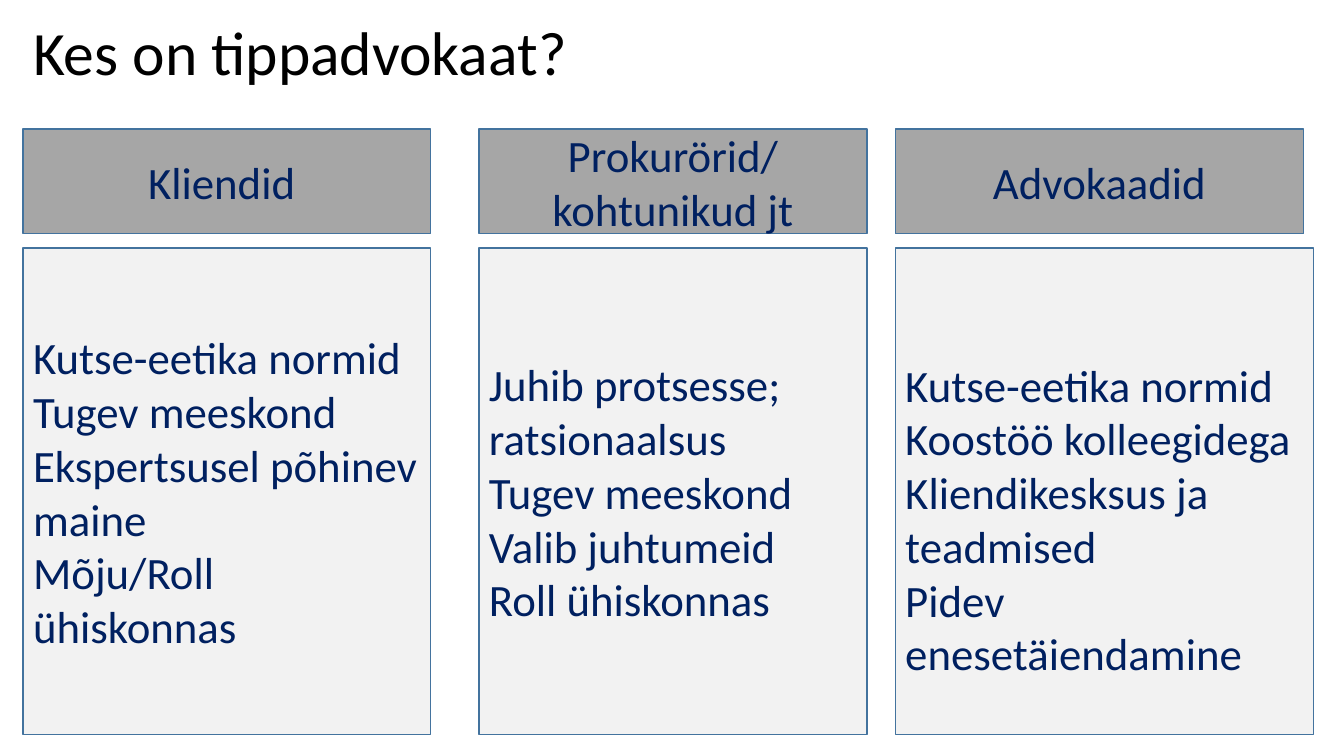
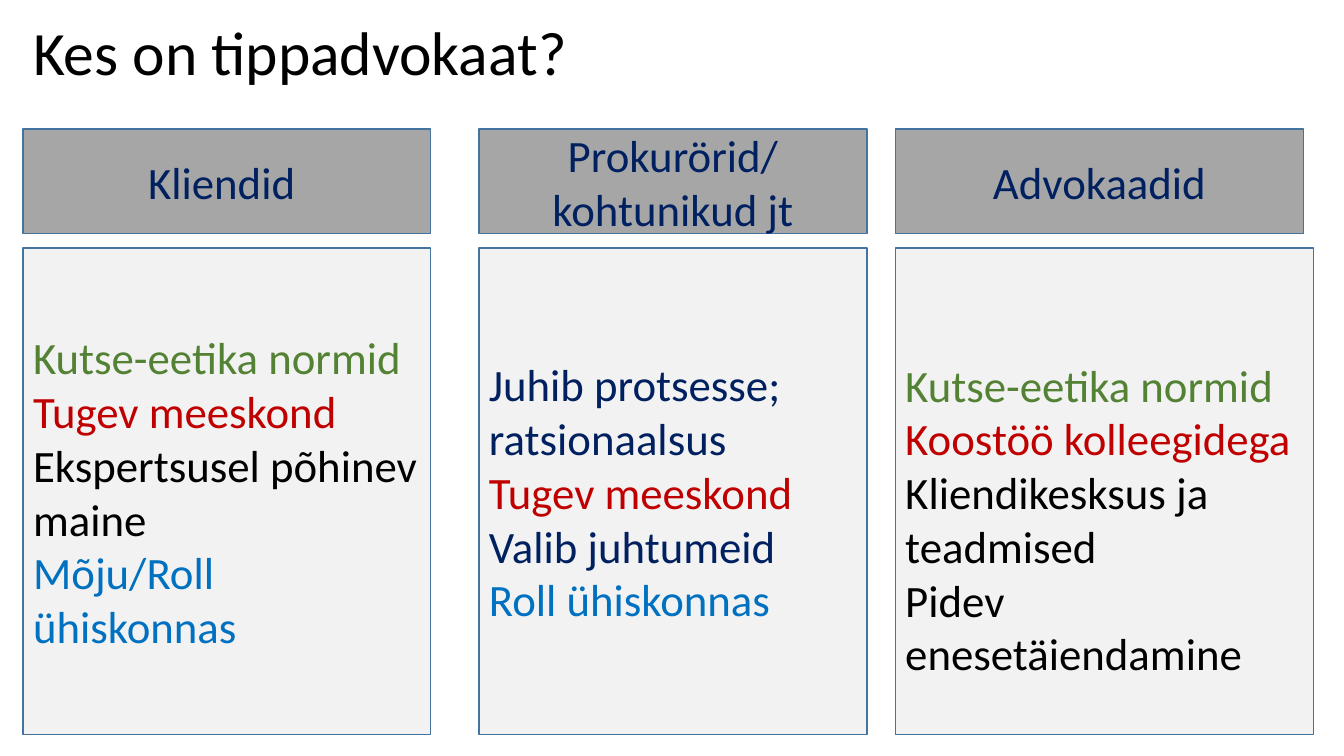
from dataclasses import dataclass

import pptx
import pptx.dml.color
import pptx.enum.shapes
import pptx.enum.text
import pptx.util

Inches = pptx.util.Inches
ALIGN = pptx.enum.text.PP_ALIGN


@dataclass(frozen=True)
class Theme:
    font: str = "Calibri"
    title_size: int = 44
    text_size: int = 32
    black: str = "000000"
    navy: str = "002060"
    green: str = "548235"
    red: str = "C00000"
    blue: str = "0070C0"
    header_fill: str = "A6A6A6"
    body_fill: str = "F2F2F2"
    border: str = "43739E"


@dataclass(frozen=True)
class Column:
    left: float
    header_width: float
    body_width: float
    heading: tuple
    qualities: tuple
    highlights: tuple
    top_inset: float = 0.05


THEME = Theme()
TITLE = "Kes on tippadvokaat?"
TITLE_BOX = (0.23, -0.17, 11.5, 1.45)
HEADER_TOP, HEADER_HEIGHT = 1.28, 1.04
BODY_TOP, BODY_HEIGHT = 2.46, 4.83

COLUMNS = (
    Column(
        0.23, 4.04, 4.04, ("Kliendid ",),
        ("Kutse-eetika normid", "Tugev meeskond",
         "Ekspertsusel põhinev maine", "Mõju/Roll ühiskonnas"),
        (THEME.green, THEME.red, THEME.black, THEME.blue),
    ),
    Column(
        4.75, 3.85, 3.85, ("Prokurörid/", "kohtunikud jt"),
        ("Juhib protsesse; ratsionaalsus", "Tugev meeskond",
         "Valib juhtumeid", "Roll ühiskonnas"),
        (THEME.navy, THEME.red, THEME.navy, THEME.blue),
    ),
    Column(
        8.88, 4.05, 4.15, ("Advokaadid",),
        ("Kutse-eetika normid", "Koostöö kolleegidega",
         "Kliendikesksus ja teadmised", "Pidev enesetäiendamine"),
        (THEME.green, THEME.red, THEME.black, THEME.black),
        top_inset=0.59,
    ),
)


def rgb(value):
    return pptx.dml.color.RGBColor.from_string(value)


def write_text(frame, lines, colors, size=THEME.text_size, align=ALIGN.LEFT,
               line_spacing=1.0, top_inset=0.05):
    frame.word_wrap = True
    frame.vertical_anchor = pptx.enum.text.MSO_ANCHOR.MIDDLE
    frame.margin_top = Inches(top_inset)
    for index, (line, color) in enumerate(zip(lines, colors)):
        paragraph = frame.add_paragraph() if index else frame.paragraphs[0]
        paragraph.alignment = align
        paragraph.line_spacing = line_spacing
        run = paragraph.add_run()
        run.text = line
        run.font.name = THEME.font
        run.font.size = pptx.util.Pt(size)
        run.font.color.rgb = rgb(color)


def add_title(slide, box):
    title = slide.shapes.add_textbox(*map(Inches, box))
    write_text(title.text_frame, (TITLE,), (THEME.black,),
               size=THEME.title_size, line_spacing=0.9)


def add_panel(slide, box, fill, lines, colors, **text_format):
    panel = slide.shapes.add_shape(
        pptx.enum.shapes.MSO_SHAPE.RECTANGLE, *map(Inches, box))
    panel.shadow.inherit = False
    panel.fill.solid()
    panel.fill.fore_color.rgb = rgb(fill)
    panel.line.color.rgb = rgb(THEME.border)
    panel.line.width = pptx.util.Pt(1)
    write_text(panel.text_frame, lines, colors, **text_format)


def add_column(slide, column, highlighted):
    quality_colors = (column.highlights if highlighted
                      else (THEME.navy,) * len(column.qualities))
    add_panel(slide, (column.left, BODY_TOP, column.body_width, BODY_HEIGHT),
              THEME.body_fill, column.qualities, quality_colors,
              top_inset=column.top_inset)
    add_panel(slide,
              (column.left, HEADER_TOP, column.header_width, HEADER_HEIGHT),
              THEME.header_fill, column.heading,
              (THEME.navy,) * len(column.heading), align=ALIGN.CENTER)


def add_comparison_slide(deck, highlighted):
    slide = deck.slides.add_slide(deck.slide_layouts[6])
    add_title(slide, TITLE_BOX)
    for column in COLUMNS:
        add_column(slide, column, highlighted)


def main():
    deck = pptx.Presentation()
    deck.slide_width = Inches(13.33)
    deck.slide_height = Inches(7.5)
    for highlighted in (False, True):
        add_comparison_slide(deck, highlighted)
    deck.save("out.pptx")


if __name__ == "__main__":
    main()
